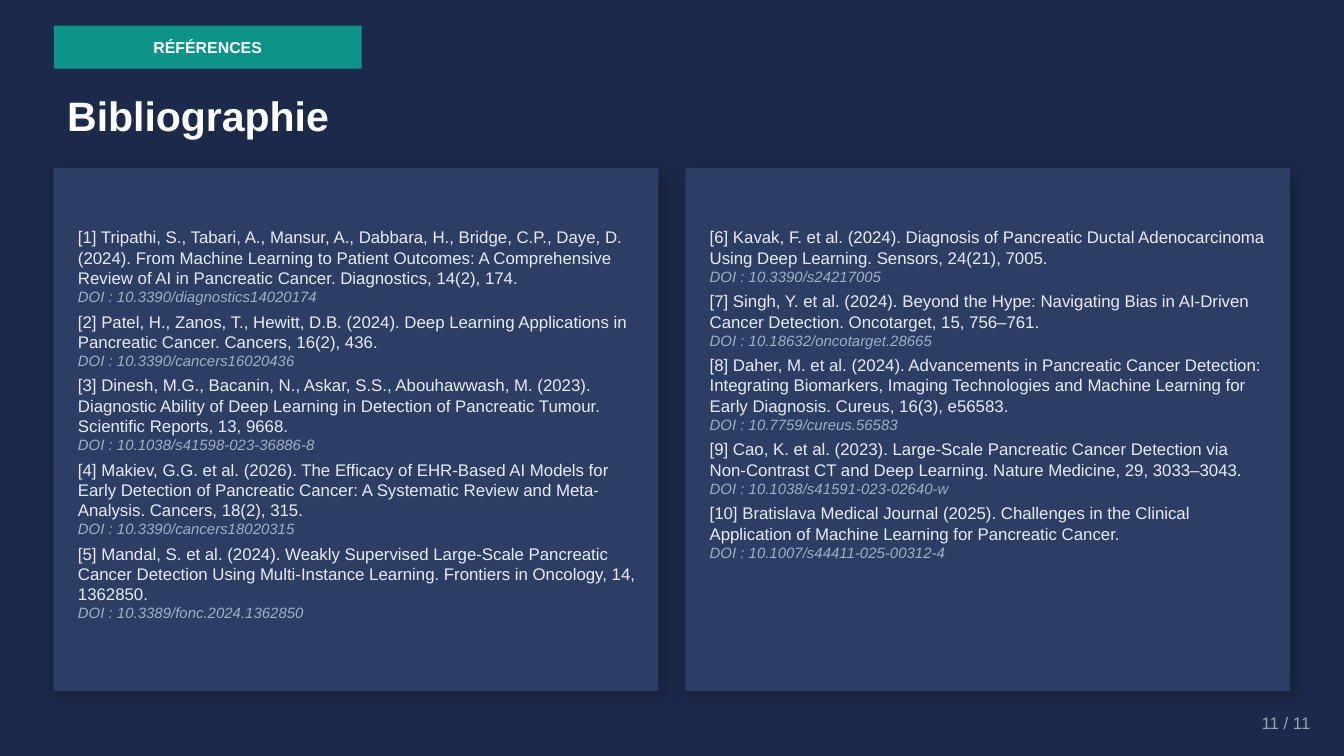
from lxml.etree import SubElement
from pptx import Presentation
from pptx.dml.color import RGBColor
from pptx.enum.shapes import MSO_SHAPE as Shape
from pptx.enum.text import MSO_ANCHOR as Anchor, PP_ALIGN as Align
from pptx.oxml.ns import qn
from pptx.util import Inches, Pt

TAG = "RÉFÉRENCES"
TITLE = "Bibliographie"
PAGE = "11 / 11"
COLUMNS = [
    [
        ("[1] Tripathi, S., Tabari, A., Mansur, A., Dabbara, H., Bridge, C.P., Daye, D. (2024). From Machine Learning to Patient Outcomes: A Comprehensive Review of AI in Pancreatic Cancer. Diagnostics, 14(2), 174.", "10.3390/diagnostics14020174"),
        ("[2] Patel, H., Zanos, T., Hewitt, D.B. (2024). Deep Learning Applications in Pancreatic Cancer. Cancers, 16(2), 436.", "10.3390/cancers16020436"),
        ("[3] Dinesh, M.G., Bacanin, N., Askar, S.S., Abouhawwash, M. (2023). Diagnostic Ability of Deep Learning in Detection of Pancreatic Tumour. Scientific Reports, 13, 9668.", "10.1038/s41598-023-36886-8"),
        ("[4] Makiev, G.G. et al. (2026). The Efficacy of EHR-Based AI Models for Early Detection of Pancreatic Cancer: A Systematic Review and Meta-Analysis. Cancers, 18(2), 315.", "10.3390/cancers18020315"),
        ("[5] Mandal, S. et al. (2024). Weakly Supervised Large-Scale Pancreatic Cancer Detection Using Multi-Instance Learning. Frontiers in Oncology, 14, 1362850.", "10.3389/fonc.2024.1362850"),
    ],
    [
        ("[6] Kavak, F. et al. (2024). Diagnosis of Pancreatic Ductal Adenocarcinoma Using Deep Learning. Sensors, 24(21), 7005.", "10.3390/s24217005"),
        ("[7] Singh, Y. et al. (2024). Beyond the Hype: Navigating Bias in AI-Driven Cancer Detection. Oncotarget, 15, 756–761.", "10.18632/oncotarget.28665"),
        ("[8] Daher, M. et al. (2024). Advancements in Pancreatic Cancer Detection: Integrating Biomarkers, Imaging Technologies and Machine Learning for Early Diagnosis. Cureus, 16(3), e56583.", "10.7759/cureus.56583"),
        ("[9] Cao, K. et al. (2023). Large-Scale Pancreatic Cancer Detection via Non-Contrast CT and Deep Learning. Nature Medicine, 29, 3033–3043.", "10.1038/s41591-023-02640-w"),
        ("[10] Bratislava Medical Journal (2025). Challenges in the Clinical Application of Machine Learning for Pancreatic Cancer.", "10.1007/s44411-025-00312-4"),
    ],
]
LEFT, CARD_W, GAP, PAD = 0.4, 4.5, 0.2, 0.18


def paint(fill, color):
    fill.solid()
    fill.fore_color.rgb = RGBColor.from_string(color)


def style(font, size, color, bold=False, italic=False):
    font.name, font.size = "Arial", Pt(size)
    font.bold, font.italic = bold, italic
    font.color.rgb = RGBColor.from_string(color)


def block(slide, box, color):
    shape = slide.shapes.add_shape(Shape.RECTANGLE, *map(Inches, box))
    shape.shadow.inherit = False
    paint(shape.fill, color)
    shape.line.fill.background()
    return shape


def cast(shape):
    effects = shape._element.spPr.find(qn("a:effectLst"))
    shadow = SubElement(effects, qn("a:outerShdw"), blurRad=str(Pt(10)), dist=str(Pt(3)),
                        dir="2700000", algn="bl", rotWithShape="0")
    black = SubElement(shadow, qn("a:srgbClr"), val="000000")
    SubElement(black, qn("a:alpha"), val="25000")


def text_box(slide, box):
    frame = slide.shapes.add_textbox(*map(Inches, box)).text_frame
    frame.word_wrap = True
    frame.margin_left = frame.margin_right = frame.margin_top = frame.margin_bottom = 0
    return frame


def add_refs(frame, refs):
    for i, (cite, doi) in enumerate(refs):
        para = frame.add_paragraph() if i else frame.paragraphs[0]
        para.text = f"{cite}\nDOI : {doi}"
        para.space_after = Pt(3)
        style(para.runs[0].font, 9, "E8EDF3")
        style(para.runs[1].font, 8, "9FB0C8", italic=True)


def main():
    """Build the bibliography slide."""
    deck = Presentation()
    deck.slide_width = Inches(10)
    deck.slide_height = deck.slide_width * 9 // 16
    slide = deck.slides.add_slide(deck.slide_layouts[5])
    paint(slide.background.fill, "1B2A4A")

    tag = block(slide, (LEFT, 0.19, 2.29, 0.32), "0D9488").text_frame
    tag.text = TAG
    tag.vertical_anchor = Anchor.MIDDLE
    tag.paragraphs[0].alignment = Align.CENTER
    style(tag.paragraphs[0].runs[0].font, 8.5, "FFFFFF", bold=True)

    title = slide.shapes.title
    title.left, title.top, title.width, title.height = map(Inches, (LEFT, 0.62, 9.19, 0.56))
    title.text_frame.text = TITLE
    title.text_frame.vertical_anchor = Anchor.TOP
    title.text_frame.paragraphs[0].alignment = Align.LEFT
    style(title.text_frame.paragraphs[0].runs[0].font, 22, "FFFFFF", bold=True)

    for i, refs in enumerate(COLUMNS):
        x = LEFT + i * (CARD_W + GAP)
        cast(block(slide, (x, 1.25, CARD_W, 3.89), "2C3E63"))
        add_refs(text_box(slide, (x + PAD, 1.69, 4.15, 3.33)), refs)

    page = text_box(slide, (8.85, 5.22, 0.9, 0.31))
    page.text = PAGE
    page.vertical_anchor = Anchor.MIDDLE
    page.paragraphs[0].alignment = Align.RIGHT
    style(page.paragraphs[0].runs[0].font, 9, "94A3B8")

    deck.save("out.pptx")


if __name__ == "__main__":
    main()
